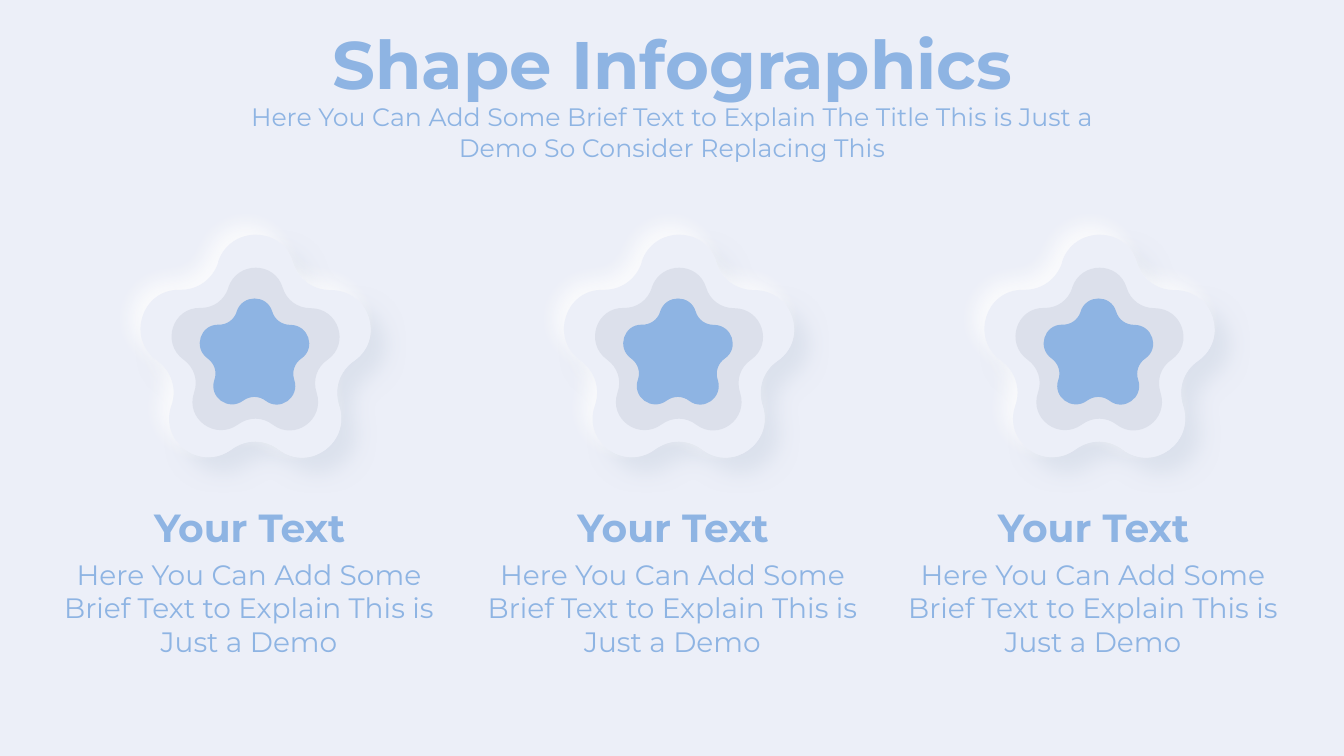
from dataclasses import dataclass
from math import cos, radians, sin

from lxml import etree
from pptx import Presentation
from pptx.dml.color import RGBColor
from pptx.enum.text import MSO_ANCHOR, MSO_AUTO_SIZE, PP_ALIGN
from pptx.oxml.ns import qn
from pptx.util import Inches, Pt

CENTER = PP_ALIGN.CENTER
TOP = MSO_ANCHOR.TOP
GROW = MSO_AUTO_SIZE.SHAPE_TO_FIT_TEXT

COLORS = {"page": "ECEFF8", "ring": "DCE0EB", "accent": "8EB4E3",
          "shade": "D1D9E6", "light": "FFFFFF"}
FONT = "Montserrat"
STAR_TURN = 32.6
STAR_WIDTH, STAR_HEIGHT = 2.27, 2.23
# One lobe and the notch after it, as two cubic curves around the star's centre
ARM = [[(-0.37, -0.91), (-0.25, -1.27), (0.26, -1.27), (0.37, -0.91)],
       [(0.37, -0.91), (0.42, -0.74), (0.57, -0.63), (0.75, -0.63)]]


@dataclass
class Shadow:
    color: str
    opacity: int
    distance: int
    angle: int


@dataclass
class Layer:
    left: float
    top: float
    scale: float
    color: str


@dataclass
class Caption:
    text: str
    left: float
    top: float
    width: float
    height: float
    size: int
    bold: bool = False


COLUMN_LEFTS = [0.3, 4.5, 8.67]
SHADOWS = [Shadow("shade", 60, 15, 45), Shadow("light", 80, 10, 225)]
BASE = Layer(1.05, 2.43, 1, "page")
INNER_LAYERS = [Layer(1.37, 2.73, 0.73, "ring"),
                Layer(1.66, 3.01, 0.476, "accent")]
TITLE = Caption("Shape Infographics", 2.78, 0.17, 7.78, 0.91, 48, True)
SUBTITLE = Caption("Here You Can Add Some Brief Text to Explain The Title "
                   "This is Just a Demo So Consider Replacing This",
                   2.3, 0.96, 8.73, 0.71, 18)


def rgb(name: str) -> RGBColor:
    return RGBColor.from_string(COLORS[name])


def turn(x: float, y: float, degrees: float) -> tuple[float, float]:
    angle = radians(degrees)
    return (x * cos(angle) - y * sin(angle), x * sin(angle) + y * cos(angle))


def curve_point(curve: list, t: float) -> tuple[float, float]:
    weights = [(1 - t) ** 3, 3 * t * (1 - t) ** 2, 3 * t * t * (1 - t), t ** 3]
    x, y = (sum(weight * point[axis] for weight, point in zip(weights, curve))
            for axis in (0, 1))
    return x, y


def star_curves() -> list[list[tuple[float, float]]]:
    """Return the cubic curves of the star, with its box starting at zero."""
    curves = [[turn(x, y, 72 * arm - STAR_TURN) for x, y in curve]
              for arm in range(5) for curve in ARM]
    edge = [curve_point(curve, step / 20) for curve in curves for step in range(20)]
    min_x = min(x for x, _ in edge)
    min_y = min(y for _, y in edge)
    return [[(x - min_x, y - min_y) for x, y in curve] for curve in curves]


STAR = star_curves()


def add_command(outline, command: str, points: list, scale: float) -> None:
    segment = etree.SubElement(outline, qn(f"a:{command}"))
    for x, y in points:
        etree.SubElement(segment, qn("a:pt"), x=str(Inches(x * scale)),
                         y=str(Inches(y * scale)))


def add_star(shapes, layer: Layer, column_left: float):
    """Build the star's box as a freeform, then give it the curved outline."""
    left, top = Inches(column_left + layer.left), Inches(layer.top)
    right = left + Inches(STAR_WIDTH * layer.scale)
    bottom = top + Inches(STAR_HEIGHT * layer.scale)
    builder = shapes.build_freeform(left, top, scale=1.0)
    builder.add_line_segments([(right, top), (right, bottom), (left, bottom)])
    star = builder.convert_to_shape()

    outline = next(star.element.iter(qn("a:path")))
    for segment in list(outline):
        outline.remove(segment)
    add_command(outline, "moveTo", STAR[0][:1], layer.scale)
    for curve in STAR:
        add_command(outline, "cubicBezTo", curve[1:], layer.scale)
    add_command(outline, "close", [], layer.scale)

    star.rotation = STAR_TURN
    star.fill.solid()
    star.fill.fore_color.rgb = rgb(layer.color)
    star.line.fill.background()
    star.shadow.inherit = False
    return star


def cast_shadow(star, shadow: Shadow) -> None:
    effects = star.element.spPr.find(qn("a:effectLst"))
    outer = etree.SubElement(effects, qn("a:outerShdw"), {
        "blurRad": str(Pt(15)), "dist": str(Pt(shadow.distance)),
        "dir": str(shadow.angle * 60000), "algn": "ctr", "rotWithShape": "0"})
    color = etree.SubElement(outer, qn("a:srgbClr"), val=COLORS[shadow.color])
    etree.SubElement(color, qn("a:alpha"), val=str(shadow.opacity * 1000))


def write_caption(box, caption: Caption) -> None:
    for side in ("left", "top", "width", "height"):
        setattr(box, side, Inches(getattr(caption, side)))
    frame = box.text_frame
    frame_format = {"word_wrap": True, "auto_size": GROW, "vertical_anchor": TOP}
    for name, value in frame_format.items():
        setattr(frame, name, value)
    para = frame.paragraphs[0]
    para.alignment = CENTER
    span = para.add_run()
    span.text = caption.text
    font_format = {"name": FONT, "size": Pt(caption.size), "bold": caption.bold}
    for name, value in font_format.items():
        setattr(span.font, name, value)
    span.font.color.rgb = rgb("accent")


def add_caption(page, caption: Caption) -> None:
    write_caption(page.shapes.add_textbox(0, 0, 0, 0), caption)


def add_column(page, left: float) -> None:
    raised_star = page.shapes.add_group_shape()
    for shadow in SHADOWS:
        cast_shadow(add_star(raised_star.shapes, BASE, left), shadow)
    for layer in INNER_LAYERS:
        add_star(page.shapes, layer, left)
    add_caption(page, Caption("Your Text", left, 4.94, 4.35, 0.57, 28, True))
    add_caption(page, Caption("Here You Can Add Some Brief Text to Explain "
                              "This is Just a Demo", left, 5.48, 4.34, 1.11, 20))


def main() -> None:
    deck = Presentation()
    deck.slide_width, deck.slide_height = Inches(13.33), Inches(7.5)
    page = deck.slides.add_slide(deck.slide_layouts[5])
    page.background.fill.solid()
    page.background.fill.fore_color.rgb = rgb("page")
    write_caption(page.shapes.title, TITLE)
    add_caption(page, SUBTITLE)
    for left in COLUMN_LEFTS:
        add_column(page, left)
    deck.save("out.pptx")


if __name__ == "__main__":
    main()
